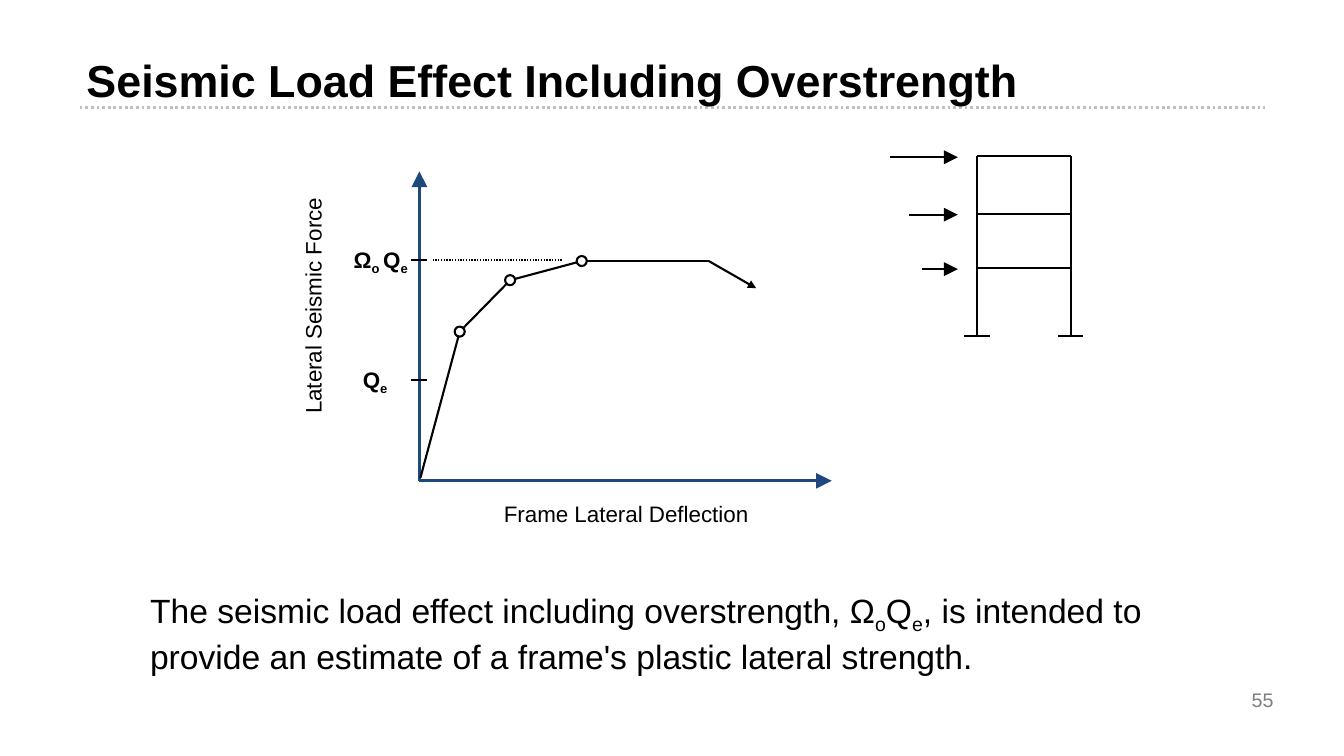
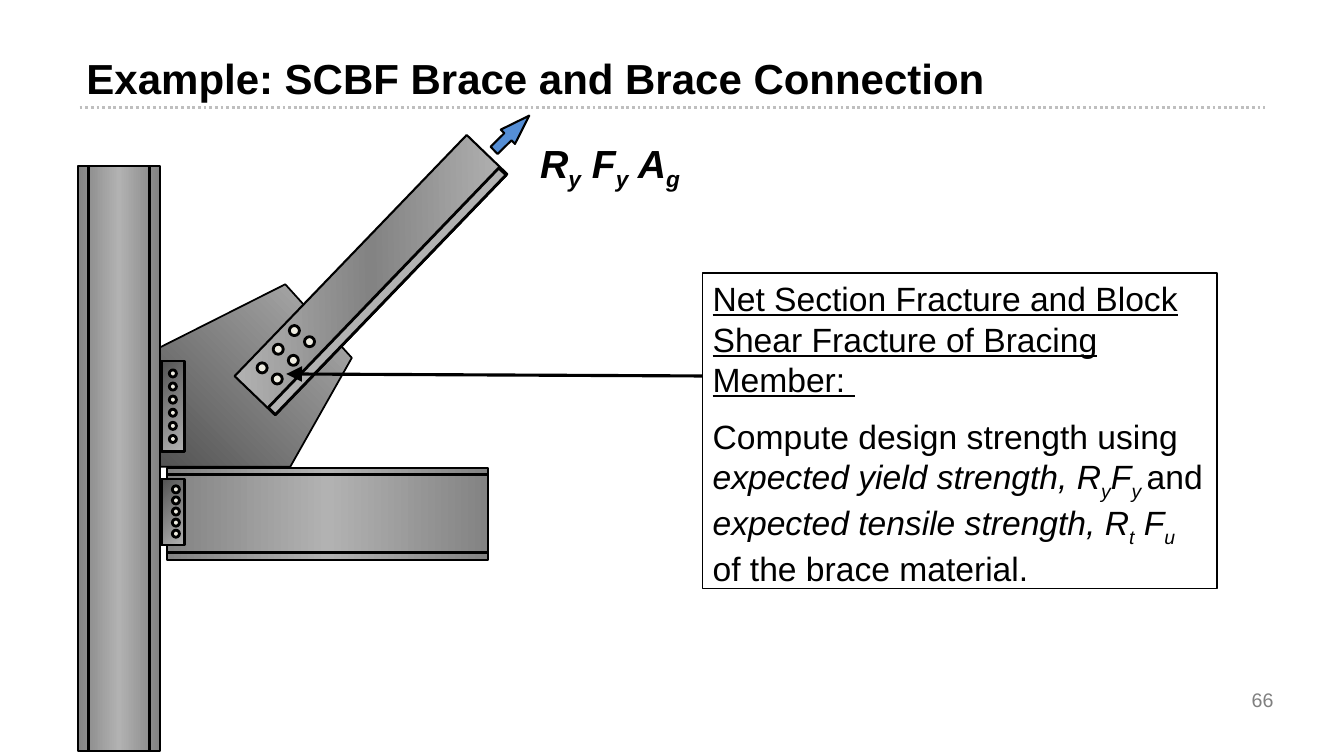
from lxml import etree
from pptx import Presentation
from pptx.dml.color import RGBColor
from pptx.enum.dml import MSO_LINE
from pptx.enum.shapes import MSO_CONNECTOR, MSO_SHAPE
from pptx.enum.text import MSO_ANCHOR, PP_ALIGN
from pptx.oxml.ns import qn
from pptx.util import Inches, Pt

STRAIGHT = MSO_CONNECTOR.STRAIGHT
DOTTED = MSO_LINE.ROUND_DOT
RECTANGLE, ELLIPSE = MSO_SHAPE.RECTANGLE, MSO_SHAPE.OVAL
RIGHT_ARROW = MSO_SHAPE.RIGHT_ARROW
LEFT, CENTER, RIGHT = PP_ALIGN.LEFT, PP_ALIGN.CENTER, PP_ALIGN.RIGHT
TOP, MIDDLE = MSO_ANCHOR.TOP, MSO_ANCHOR.MIDDLE

FONT = "Arial"
BLACK, WHITE, GRAY, RULE_GRAY = "000000", "FFFFFF", "7F7F7F", "BFBFBF"
NAVY, SKY, BOLT = "1F497D", "558ED5", "EEECE1"
DARK_STEEL, MID_STEEL, LIGHT_STEEL = "525252", "838383", "B2B2B2"
ROUNDED_STEEL = (MID_STEEL, LIGHT_STEEL, MID_STEEL)
BRACE_STEEL = (LIGHT_STEEL, MID_STEEL, LIGHT_STEEL)
PLATE_STEEL = (DARK_STEEL, LIGHT_STEEL)
BREAK = ("\n", "")


def grid(units):
    """Length of so many columns or rows; each is a tenth of an inch."""
    return Inches(units / 10)


def color(hex_code):
    return RGBColor.from_string(hex_code)


def set_line(line, hex_code, width):
    line.color.rgb = color(hex_code)
    line.width = Pt(width)


def set_gradient(shape, stops, angle):
    """Fill with evenly spaced stops; the angle runs clockwise in degrees."""
    shape.fill.solid()
    properties = shape.element.spPr
    gradient = etree.Element(qn("a:gradFill"), rotWithShape="1")
    stop_list = etree.SubElement(gradient, qn("a:gsLst"))
    for index, hex_code in enumerate(stops):
        position = str(100000 * index // (len(stops) - 1))
        stop = etree.SubElement(stop_list, qn("a:gs"), pos=position)
        etree.SubElement(stop, qn("a:srgbClr"), val=hex_code)
    etree.SubElement(gradient, qn("a:lin"), ang=str(angle * 60000), scaled="0")
    properties.replace(properties.find(qn("a:solidFill")), gradient)


def paint(shape, fill, width, angle=0):
    """Fill with one colour or a tuple of gradient stops, outlined in black."""
    shape.shadow.inherit = False
    if isinstance(fill, tuple):
        set_gradient(shape, fill, angle)
    else:
        shape.fill.solid()
        shape.fill.fore_color.rgb = color(fill)
    set_line(shape.line, BLACK, width)


def add_line(slide, start, end, width=1.5, hex_code=BLACK, dash=None, arrow=None):
    """Draw a line; arrow gives the size of the head at its end."""
    line = slide.shapes.add_connector(STRAIGHT, *map(grid, start + end))
    set_line(line.line, hex_code, width)
    if dash:
        line.line.dash_style = dash
    properties = line.element.spPr
    if arrow:
        etree.SubElement(properties.find(qn("a:ln")), qn("a:tailEnd"),
                         type="triangle", w=arrow, len=arrow)
    etree.SubElement(properties, qn("a:effectLst"))
    return line


def add_shape(slide, kind, box, fill, width=1.5, angle=0, rotation=0):
    shape = slide.shapes.add_shape(kind, *map(grid, box))
    paint(shape, fill, width, angle)
    shape.rotation = rotation
    return shape


def add_circles(slide, centers, diameter, fill, width):
    for x, y in centers:
        box = (x - diameter / 2, y - diameter / 2, diameter, diameter)
        add_shape(slide, ELLIPSE, box, fill, width)


def write_runs(paragraph, runs, size, hex_code):
    """Runs are (text, marks); marks are b, i, u and s for subscript."""
    for text, marks in runs:
        if (text, marks) == BREAK:
            paragraph.add_line_break()
            continue
        run = paragraph.add_run()
        run.text = text
        run.font.name = FONT
        run.font.size = Pt(size)
        run.font.color.rgb = color(hex_code)
        run.font.bold = "b" in marks
        run.font.italic = "i" in marks
        run.font.underline = "u" in marks
        if "s" in marks:
            run._r.get_or_add_rPr().set("baseline", "-25000")


def add_text(slide, box, paragraphs, size, hex_code=BLACK, align=LEFT,
             anchor=TOP, space_before=0):
    text_box = slide.shapes.add_textbox(*map(grid, box))
    frame = text_box.text_frame
    frame.word_wrap = True
    frame.vertical_anchor = anchor
    for index, runs in enumerate(paragraphs):
        paragraph = frame.add_paragraph() if index else frame.paragraphs[0]
        paragraph.alignment = align
        if index:
            paragraph.space_before = Pt(space_before)
        write_runs(paragraph, runs, size, hex_code)
    return text_box


def subscripted(parts, marks=""):
    """Alternate plain and subscript runs."""
    return [(part, marks + "s" * (index % 2)) for index, part in enumerate(parts)]


def add_slide(presentation, title, title_size, number):
    slide = presentation.slides.add_slide(presentation.slide_layouts[6])
    add_text(slide, (7.6, 4.7, 119.7, 6.8), [[(title, "b")]], title_size)
    add_text(slide, (96.2, 67.4, 31.1, 4), [[(number, "")]], 14, GRAY, RIGHT, MIDDLE)
    return slide


def add_title_rule(slide):
    """Move the rule to the layout, so that all slides share it."""
    rule = add_line(slide, (7.9, 10.7), (125.5, 10.7), 2, RULE_GRAY, DOTTED)
    slide.slide_layout.shapes.element.append(rule.element)


def draw_frame(slide):
    left, right, base = 96.9, 106.2, 33.3
    floors = (15.5, 21.2, 26.6)
    for x in (left, right):
        add_line(slide, (x, floors[0]), (x, base))
        add_line(slide, (x - 1.25, base), (x + 1.25, base))
    for y, load in zip(floors, (6.7, 4.8, 3.6)):
        add_line(slide, (left, y), (right, y))
        add_line(slide, (95 - load, y + 0.1), (95, y + 0.1), arrow="lg")


def draw_pushover_curve(slide):
    axis, base, elastic, plastic = 41.6, 47.7, 37.7, 25.8
    add_line(slide, (axis, base), (axis, 17), 2.25, NAVY, arrow="lg")
    add_line(slide, (axis, base), (82.5, base), 2.25, NAVY, arrow="lg")
    points = [(41.7, 47.4), (45.6, 32.9), (50.6, 27.8), (57.7, 25.9),
              (70.3, 25.9), (75, 28.6)]
    for start, end in zip(points, points[1:]):
        add_line(slide, start, end, arrow="med" if end == points[-1] else None)
    add_circles(slide, points[1:4], 1, WHITE, 1.5)
    for y in (elastic, plastic):
        add_line(slide, (axis - 0.8, y), (axis + 0.8, y))
    add_line(slide, (42.9, plastic), (55.8, plastic), 1, dash=DOTTED)
    add_text(slide, (35, 35.8, 7.4, 3.7), [subscripted(["Q", "e"], "b")], 16)
    add_text(slide, (34.1, 23.9, 8.1, 3.7),
             [subscripted(["Ω", "o ", "Q", "e"], "b")], 16)
    add_text(slide, (41.7, 49.1, 40.8, 3.7),
             [[("Frame Lateral Deflection", "")]], 16, align=CENTER)
    force_label = add_text(slide, (18.9, 28.5, 24.3, 3.7),
                           [[("Lateral Seismic Force", "")]], 16, align=CENTER)
    force_label.rotation = 270


def build_overstrength(presentation):
    slide = add_slide(presentation, "Seismic Load Effect Including Overstrength", 32, "55")
    add_title_rule(slide)
    draw_frame(slide)
    draw_pushover_curve(slide)
    summary = subscripted([
        "The seismic load effect including overstrength, Ω", "o", "Q", "e",
        ", is intended to provide an estimate of a frame's plastic lateral strength."])
    add_text(slide, (13.9, 58, 109.5, 9.1), [summary], 24)


def draw_gusset(slide):
    points = [(15.8, 34.5), (28.3, 28.2), (34.9, 35.5), (28.8, 46.3), (15.6, 46.3)]
    corners = [(grid(x), grid(y)) for x, y in points]
    builder = slide.shapes.build_freeform(*corners[0])
    builder.add_line_segments(corners[1:], close=True)
    paint(builder.convert_to_shape(), PLATE_STEEL, 1.25, 315)


def draw_column_and_beam(slide):
    top, bottom = 16.5, 74.5
    add_shape(slide, RECTANGLE, (7.7, top, 8.2, bottom - top), ROUNDED_STEEL)
    for x in (8.8, 14.8):
        add_line(slide, (x, top), (x, bottom), 2)
    left, right = 16.6, 48.4
    add_shape(slide, RECTANGLE, (left, 46.4, right - left, 9.2), ROUNDED_STEEL)
    for y in (47.1, 54.8):
        add_line(slide, (left, y), (right, y), 2)


def draw_bolted_plate(slide, top, height, bolt_x, bolt_y, pitch, count):
    add_shape(slide, RECTANGLE, (16, top, 2.3, height), PLATE_STEEL, 1.75, 45)
    centers = [(bolt_x, bolt_y + pitch * row) for row in range(count)]
    add_circles(slide, centers, 0.7, BOLT, 2)


def draw_brace(slide):
    tilt = 313.9
    add_shape(slide, RECTANGLE, (20.2, 24.5, 33.2, 5.6), BRACE_STEEL, 1.5, 45, tilt)
    add_shape(slide, RECTANGLE, (21.9, 28.4, 33, 1), LIGHT_STEEL, 2, 0, tilt)
    centers = [(26 + 1.6 * row + 1.5 * column, 36.5 - 1.85 * row + 1.1 * column)
               for row in range(3) for column in range(2)]
    add_circles(slide, centers, 1, BOLT, 2)


def build_brace_connection(presentation):
    slide = add_slide(presentation, "Example: SCBF Brace and Brace Connection", 30, "66")
    pull = add_shape(slide, RIGHT_ARROW, (48.3, 12.2, 4.9, 2), SKY, rotation=315.3)
    pull.adjustments[1] = 1.49
    add_text(slide, (52.6, 13.3, 19.3, 5.7),
             [subscripted(["R", "y", " F", "y", " A", "g"], "bi")], 28)
    draw_gusset(slide)
    draw_column_and_beam(slide)
    draw_bolted_plate(slide, 47.5, 6.6, 17.45, 48.55, 1.1, 5)
    draw_brace(slide)
    draw_bolted_plate(slide, 35.8, 9, 17.15, 37.05, 1.3, 6)
    heading = [("Net Section Fracture and Block Shear Fracture of Bracing Member: ", "u")]
    advice = [("Compute design strength using ", "")]
    advice += subscripted(["expected yield strength, R", "y", "F", "y "], "i")
    advice += [("and ", "")]
    advice += subscripted(["expected tensile strength, R", "t", " F", "u"], "i")
    advice += [BREAK, ("of the brace material.", "")]
    note = add_text(slide, (69.7, 27.1, 51, 31.3), [heading, advice], 24, space_before=12)
    set_line(note.line, BLACK, 1)
    add_line(slide, (69.7, 37.3), (28.4, 37.1), 2.25, arrow="lg")


def main():
    presentation = Presentation()
    presentation.slide_width = grid(133.3)
    presentation.slide_height = grid(75)
    build_overstrength(presentation)
    build_brace_connection(presentation)
    presentation.save("out.pptx")


if __name__ == "__main__":
    main()
